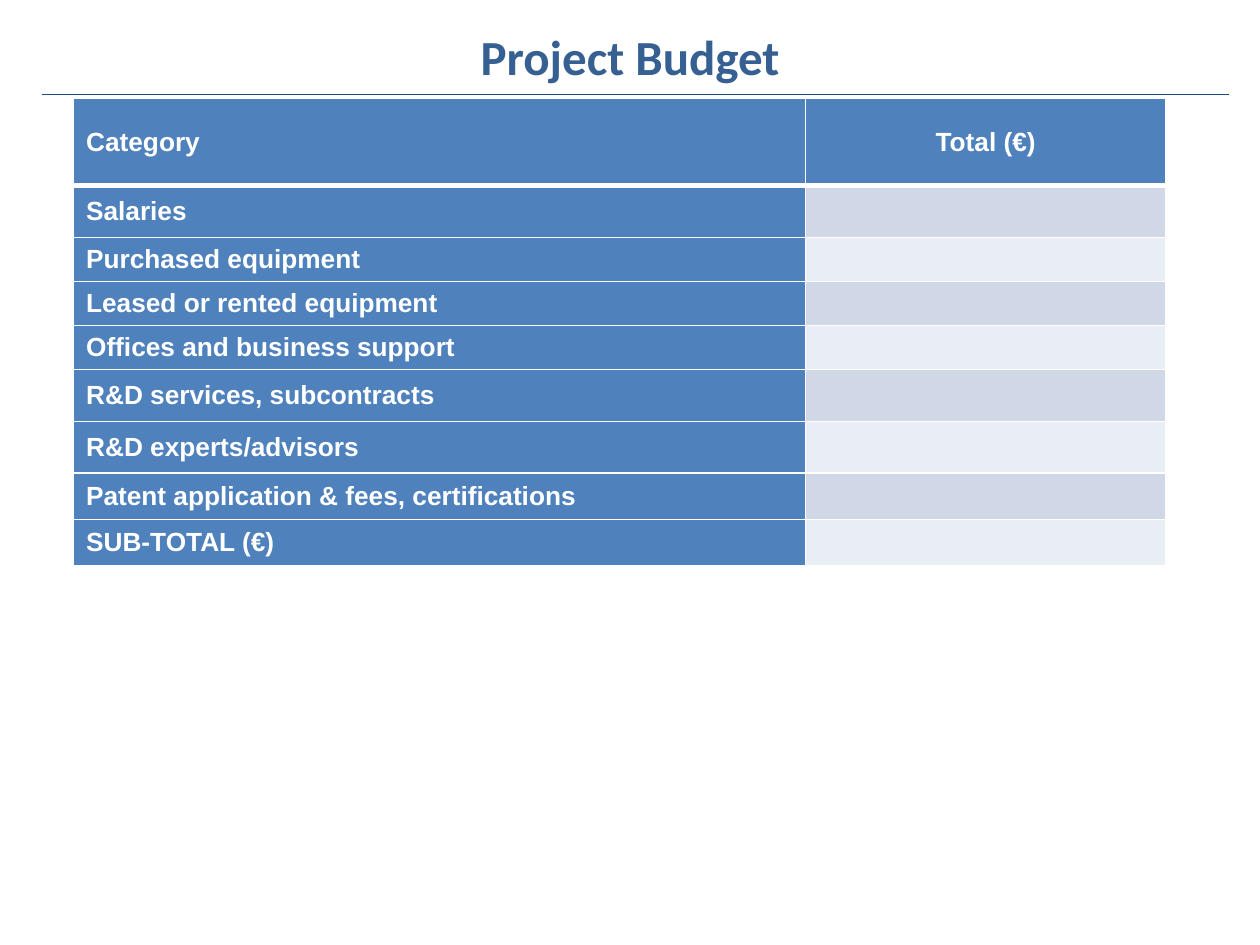
from lxml.etree import SubElement
from pptx import Presentation
from pptx.dml.color import RGBColor
from pptx.enum.shapes import MSO_CONNECTOR
from pptx.enum.text import MSO_ANCHOR as ANCHOR, PP_ALIGN as ALIGN
from pptx.oxml.ns import qn
from pptx.util import Pt

COLORS = {
    "title": "376092",
    "rule": "1F497D",
    "label": "4F81BD",
    "odd": "D0D8E8",
    "even": "E9EDF4",
    "white": "FFFFFF",
}
ROWS = [
    ("Category", 49.7),
    ("Salaries", 29.5),
    ("Purchased equipment", 25.2),
    ("Leased or rented equipment", 25.2),
    ("Offices and business support", 25.2),
    ("R&D services, subcontracts", 29.5),
    ("R&D experts/advisors", 29.5),
    ("Patent application & fees, certifications", 26.6),
    ("SUB-TOTAL (€)", 26.6),
]
COL_WIDTHS = (418.3, 205.9)


def rgb(name):
    """Return the named colour."""
    return RGBColor.from_string(COLORS[name])


def style_text(p, font, size, color, align):
    """Set the bold font and the alignment of a paragraph."""
    p.alignment = align
    p.font.name, p.font.size, p.font.bold = font, Pt(size), True
    p.font.color.rgb = rgb(color)


def add_title(slide, text):
    """Add the centred slide title."""
    tf = slide.shapes.add_textbox(Pt(36), Pt(9.4), Pt(648), Pt(44.6)).text_frame
    tf.word_wrap = True
    tf.vertical_anchor = ANCHOR.MIDDLE
    p = tf.paragraphs[0]
    p.text = text
    style_text(p, "Calibri", 28, "title", ALIGN.CENTER)


def add_rule(slide):
    """Add the line under the title."""
    line = slide.shapes.add_connector(
        MSO_CONNECTOR.STRAIGHT, Pt(24), Pt(54), Pt(702), Pt(54))
    line.line.color.rgb = rgb("rule")
    line.line.width = Pt(1)
    SubElement(line._element.spPr, qn("a:effectLst"))


def set_borders(cell, widths):
    """Draw white cell borders with widths for left, right, top and bottom."""
    tc_pr = cell._tc.get_or_add_tcPr()
    for i, (side, width) in enumerate(zip("LRTB", widths)):
        ln = SubElement(tc_pr, qn(f"a:ln{side}"), w=str(Pt(width)))
        fill = SubElement(ln, qn("a:solidFill"))
        SubElement(fill, qn("a:srgbClr"), val=COLORS["white"])
        tc_pr.insert(i, ln)


def fill_cell(cell, text, color, align, widths):
    """Set the text, fill and borders of a cell."""
    cell.vertical_anchor = ANCHOR.MIDDLE
    cell.fill.solid()
    cell.fill.fore_color.rgb = rgb(color)
    set_borders(cell, widths)
    p = cell.text_frame.paragraphs[0]
    if text:
        p.text = text
    else:
        cell.margin_top = cell.margin_bottom = 0
    style_text(p, "Arial", 15, "white", align)


def add_budget_table(slide):
    """Add the budget table with a blank column for the totals."""
    table = slide.shapes.add_table(
        len(ROWS), len(COL_WIDTHS), Pt(42), Pt(56.4),
        Pt(sum(COL_WIDTHS)), Pt(sum(height for _, height in ROWS))).table
    for col, width in zip(table.columns, COL_WIDTHS):
        col.width = Pt(width)
    for i, (label, height) in enumerate(ROWS):
        table.rows[i].height = Pt(height)
        widths = (1, 1, 3 if i == 1 else 1, 3 if i == 0 else 1)
        total = "Total (€)" if i == 0 else ""
        band = "label" if i == 0 else "odd" if i % 2 else "even"
        fill_cell(table.cell(i, 0), label, "label", ALIGN.LEFT, widths)
        fill_cell(table.cell(i, 1), total, band, ALIGN.CENTER, widths)


def main():
    """Build and save the slide."""
    prs = Presentation()
    prs.slide_width, prs.slide_height = Pt(720), Pt(540)
    slide = prs.slides.add_slide(prs.slide_layouts[6])
    add_title(slide, "Project Budget")
    add_rule(slide)
    add_budget_table(slide)
    prs.save("out.pptx")


if __name__ == "__main__":
    main()
